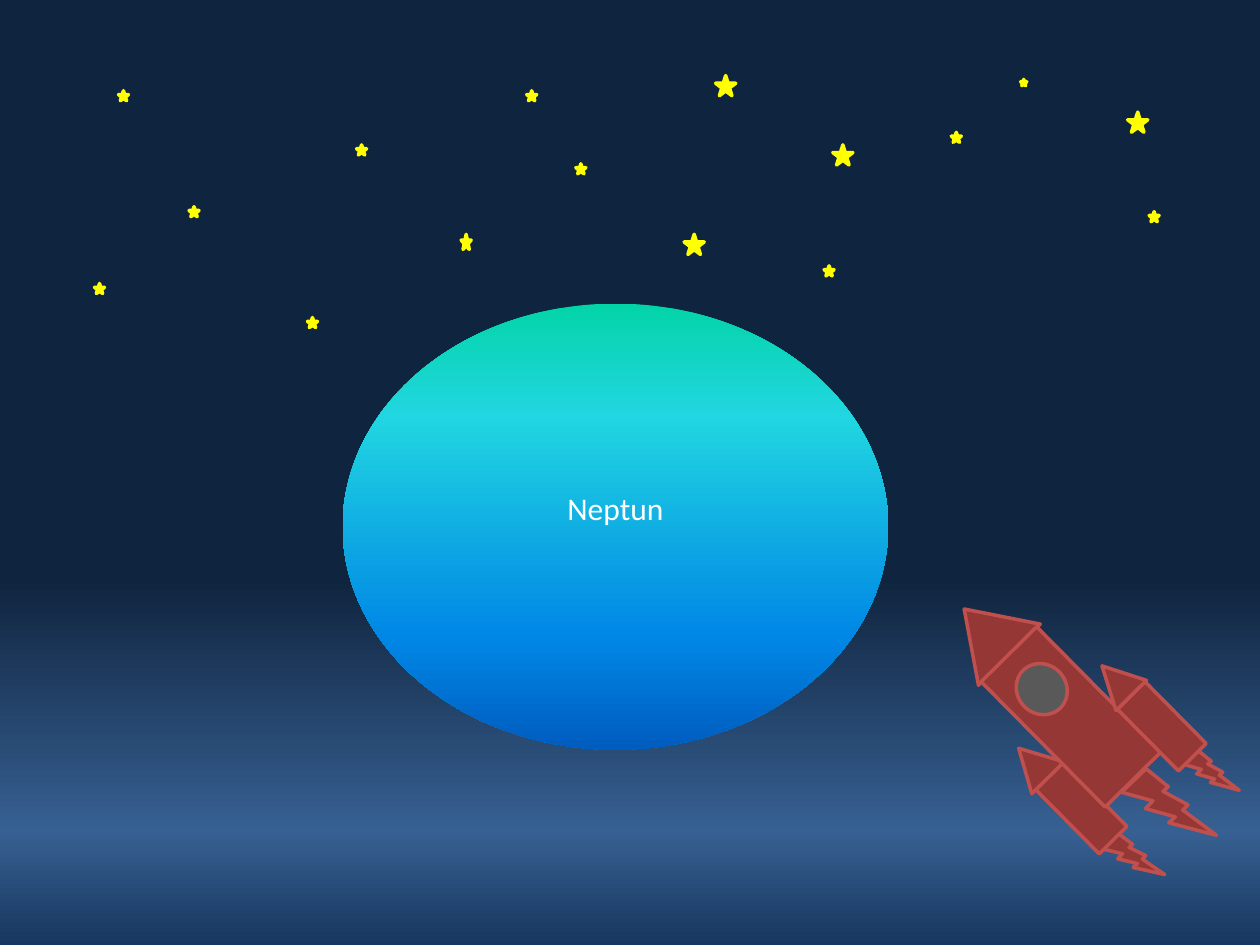
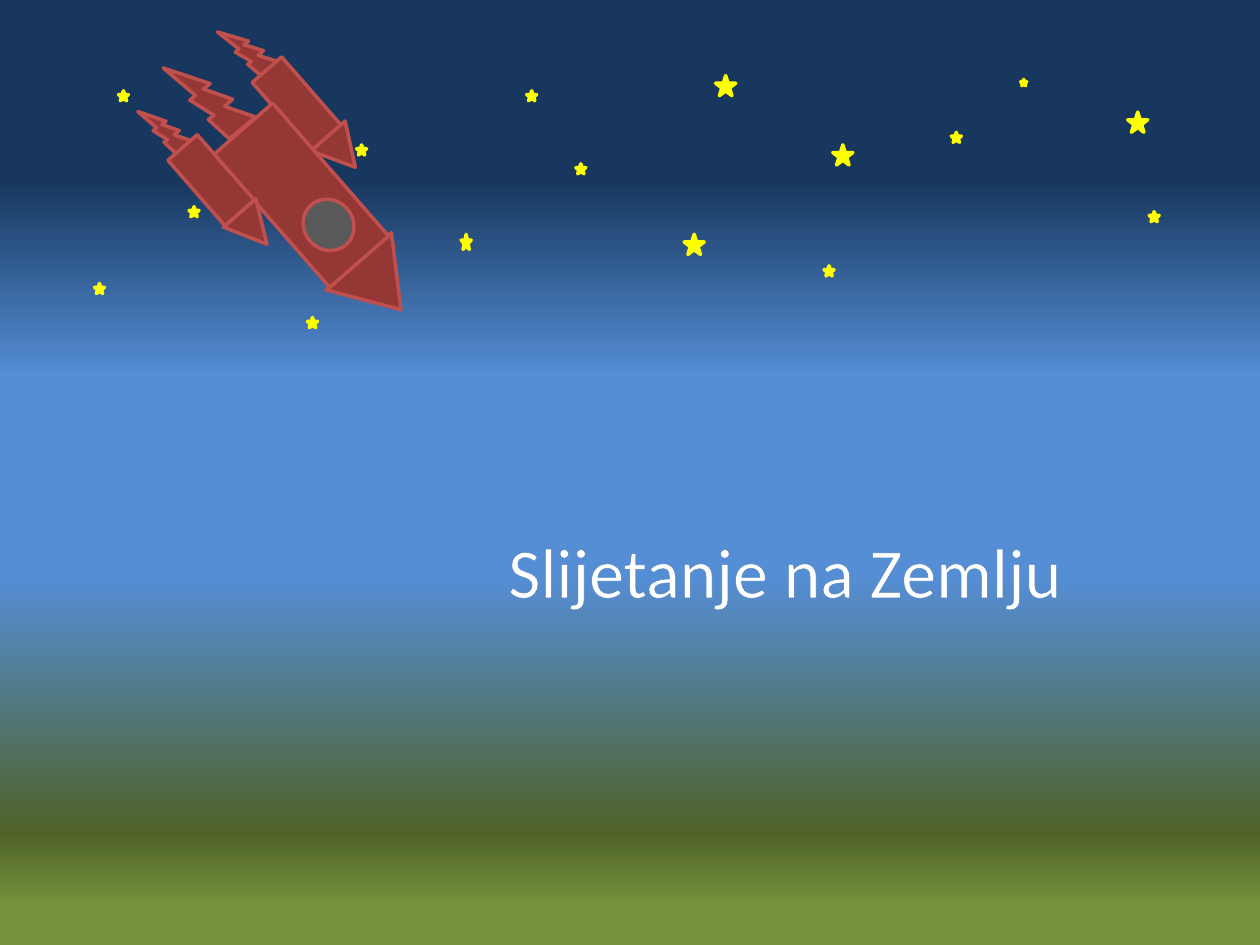
from math import cos, radians, sin

from lxml import etree
from pptx import Presentation
from pptx.dml.color import RGBColor
from pptx.enum.shapes import MSO_SHAPE
from pptx.enum.text import MSO_ANCHOR, PP_ALIGN
from pptx.oxml.ns import qn
from pptx.util import Inches, Pt

STAR, OVAL = MSO_SHAPE.STAR_5_POINT, MSO_SHAPE.OVAL
RECT, CONE = MSO_SHAPE.RECTANGLE, MSO_SHAPE.ISOSCELES_TRIANGLE
BOLT = MSO_SHAPE.LIGHTNING_BOLT
CENTER, MIDDLE = PP_ALIGN.CENTER, MSO_ANCHOR.MIDDLE

UNIT = Inches(1)  # one grid cell: 10 columns by 7.5 rows
COLS, ROWS = 10, 7.5
FONT = "Calibri"
HEX = {
    "star": "FFFF00", "hull": "953735", "edge": "C0504D", "glass": "595959",
    "text": "FFFFFF", "rim": "4F81BD", "night": "0F243E", "dusk": "17375E",
    "haze": "376092", "sky": "558ED5", "soil": "4F6228", "grass": "77933C",
    "mint": "03D4A8", "aqua": "21D6E0", "blue": "0087E6", "deep": "005CBF",
}
SPACE = [(0, "night"), (61, "night"), (88, "haze"), (100, "dusk")]
EARTH = [(19, "dusk"), (40, "sky"), (61, "sky"), (88, "soil"), (96, "grass")]
GLOBE = [(0, "mint"), (25, "aqua"), (75, "blue"), (100, "deep")]

FIELD = (0.75, 0.6, 8.45, 2)
SMALL, TALL, TINY, LARGE = (0.08, 0.08), (0.08, 0.12), (0.05, 0.05), (0.16, 0.16)
STARS = {  # left and top within the field, by size
    SMALL: [(0, 1.65), (0.75, 1.04), (2.08, 0.55), (1.69, 1.92), (6.8, 0.45),
            (0.19, 0.12), (3.82, 0.7), (5.79, 1.51), (3.43, 0.12), (8.37, 1.08)],
    TALL: [(2.91, 1.26)],
    TINY: [(7.35, 0.03)],
    LARGE: [(5.86, 0.55), (4.93, 0), (8.2, 0.29), (4.68, 1.26)],
}
PARTS = [  # kind, centre from the middle of the upright hull, size, tilt, fill
    (BOLT, (-0.44, 1.13), (0.41, 0.43), 26.2, "hull"),
    (RECT, (-0.45, 0.57), (0.31, 0.72), 0, "hull"),
    (CONE, (-0.47, 0.05), (0.36, 0.33), 0, "hull"),
    (CONE, (0, -0.95), (0.69, 0.51), 0, "hull"),
    (BOLT, (0.47, 1.09), (0.38, 0.39), 29.4, "hull"),
    (BOLT, (0.04, 1.04), (0.62, 0.67), 27.5, "hull"),
    (RECT, (0, 0), (0.62, 1.4), 0, "hull"),
    (RECT, (0.46, 0.56), (0.31, 0.69), 0, "hull"),
    (CONE, (0.46, 0.05), (0.34, 0.33), 0, "hull"),
    (OVAL, (-0.01, -0.32), (0.39, 0.42), 0, "glass"),
]


def rgb(name):
    return RGBColor.from_string(HEX[name])


def grid(*cells):
    return [int(cell * UNIT) for cell in cells]


def shade(owner, fill, stops):
    """Fill the owner from top to bottom with (percent, colour) stops."""
    fill.gradient()
    fill.gradient_angle = 270
    ramp = owner.element.find(".//" + qn("a:gsLst"))
    for old in list(ramp):
        ramp.remove(old)
    for share, name in stops:
        stop = etree.SubElement(ramp, qn("a:gs"), pos=str(share * 1000))
        etree.SubElement(stop, qn("a:srgbClr"), val=HEX[name])


def draw(shapes, kind, box, fill, line, turn=0):
    shape = shapes.add_shape(kind, *grid(*box))
    shape.shadow.inherit = False
    shape.rotation = turn
    shape.fill.solid()
    shape.fill.fore_color.rgb = rgb(fill)
    shape.line.color.rgb = rgb(line)
    shape.line.width = Pt(2)
    return shape


def write(frame, text, size):
    para = frame.paragraphs[0]
    para.alignment = CENTER
    run = para.add_run()
    run.text = text
    for key, value in {"name": FONT, "size": Pt(size)}.items():
        setattr(run.font, key, value)
    run.font.color.rgb = rgb("text")
    return run


def stars(slide, box):
    group = slide.shapes.add_group_shape()
    for size, spots in STARS.items():
        for x, y in spots:
            draw(group.shapes, STAR, (box[0] + x, box[1] + y, *size), "star", "star")


def rocket(slide, box, turn):
    """Build the rocket round its hull box, turned clockwise by degrees."""
    left, top, wide, high = box
    c, s = cos(radians(turn)), sin(radians(turn))
    group = slide.shapes.add_group_shape()
    for kind, (x, y), (w, h), tilt, fill in PARTS:
        mid = left + wide / 2 + x * c - y * s
        row = top + high / 2 + x * s + y * c
        place = (mid - w / 2, row - h / 2, w, h)
        draw(group.shapes, kind, place, fill, "edge", (turn + tilt) % 360)


def planet(slide, box, name):
    globe = slide.shapes.add_shape(OVAL, *grid(*box))
    globe.shadow.inherit = False
    globe.line.fill.background()
    shade(globe, globe.fill, GLOBE)
    frame = globe.text_frame
    form = {"vertical_anchor": MIDDLE, "word_wrap": True, "margin_bottom": Inches(0.35)}
    for key, value in form.items():
        setattr(frame, key, value)
    write(frame, name, 18)


def title(slide, box, text):
    frame = slide.shapes.add_textbox(*grid(*box)).text_frame
    frame.word_wrap = True
    run = write(frame, text, 40)
    rim = etree.Element(qn("a:ln"), w=str(Pt(0.8)))
    paint = etree.SubElement(rim, qn("a:solidFill"))
    etree.SubElement(paint, qn("a:srgbClr"), val=HEX["rim"])
    run.font._element.insert(0, rim)


def scene(deck, stops):
    slide = deck.slides.add_slide(deck.slide_layouts[6])
    shade(slide, slide.background.fill, stops)
    return slide


def flight(deck):
    slide = scene(deck, SPACE)
    stars(slide, FIELD)
    planet(slide, (2.72, 2.41, 4.33, 3.54), "Neptun")
    rocket(slide, (8.19, 4.99, 0.62, 1.4), 315.3)


def landing(deck):
    slide = scene(deck, EARTH)
    rocket(slide, (2.08, 0.85, 0.62, 1.4), 138.9)
    stars(slide, FIELD)
    title(slide, (3.5, 4.14, 5.46, 0.77), "Slijetanje na Zemlju")


def main():
    deck = Presentation()
    deck.slide_width, deck.slide_height = grid(COLS, ROWS)
    flight(deck)
    landing(deck)
    deck.save("out.pptx")


if __name__ == "__main__":
    main()
